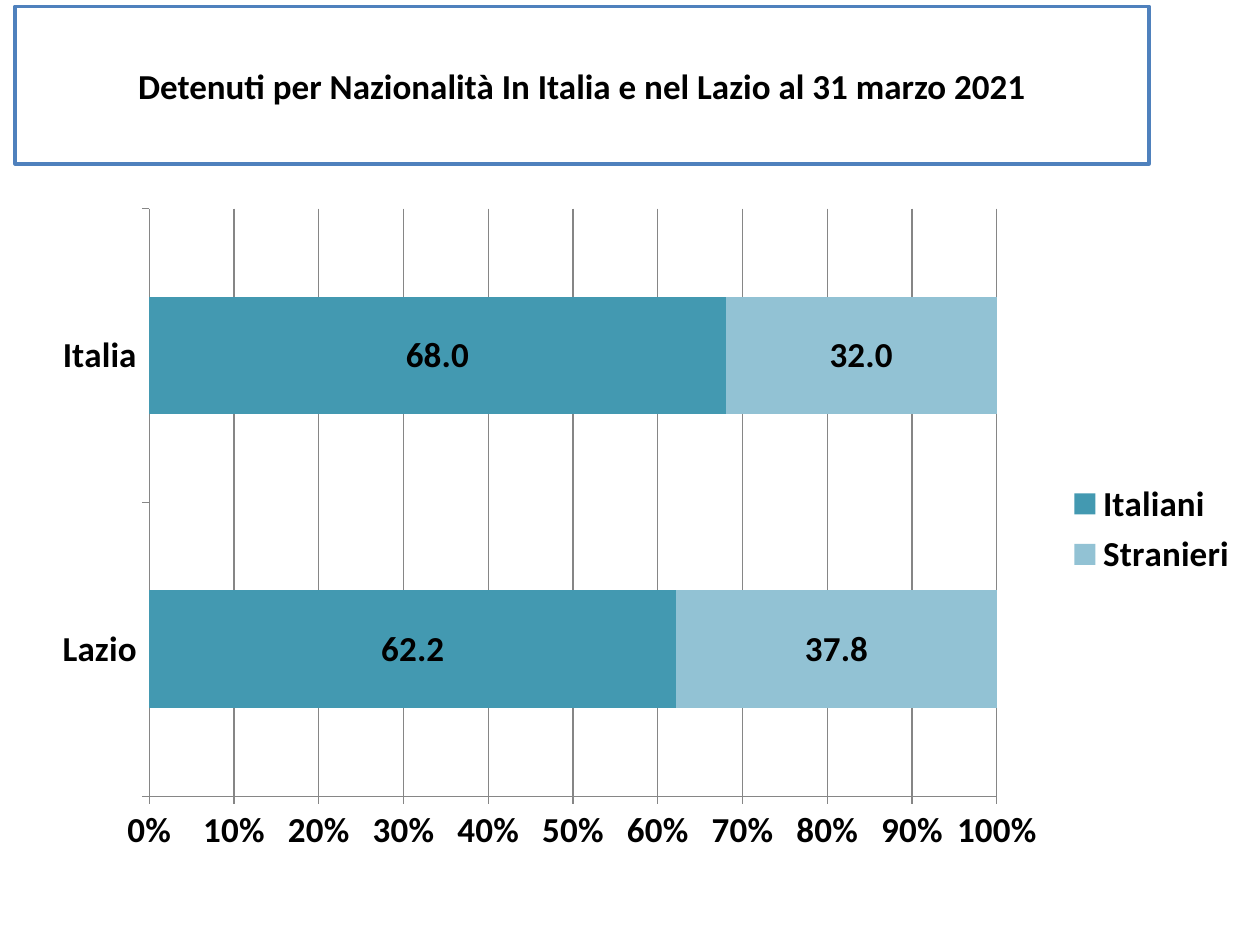
from lxml import etree
from pptx import Presentation
from pptx.chart.data import CategoryChartData
from pptx.dml.color import RGBColor
from pptx.enum.chart import XL_CHART_TYPE, XL_LABEL_POSITION, XL_LEGEND_POSITION, XL_TICK_MARK
from pptx.enum.shapes import MSO_SHAPE
from pptx.enum.text import MSO_ANCHOR, PP_ALIGN
from pptx.oxml.ns import qn
from pptx.util import Inches, Pt

BAR = XL_CHART_TYPE.BAR_STACKED_100
CENTER = XL_LABEL_POSITION.CENTER
RIGHT = XL_LEGEND_POSITION.RIGHT
OUTSIDE = XL_TICK_MARK.OUTSIDE
RECT = MSO_SHAPE.RECTANGLE
MIDDLE = MSO_ANCHOR.MIDDLE
MID = PP_ALIGN.CENTER

COLORS = {
    "white": "FFFFFF",
    "black": "000000",
    "border": "4F81BD",
    "grid": "868686",
    "Italiani": "4399B1",
    "Stranieri": "92C2D4",
}


def color(name):
    return RGBColor.from_string(COLORS[name])


def style(font):
    font.name = "Calibri"
    font.size = Pt(20)
    font.bold = True
    font.color.rgb = color("black")


prs = Presentation()
prs.slide_width = Inches(10)
prs.slide_height = Inches(7.5)
slide = prs.slides.add_slide(prs.slide_layouts[6])

title = slide.shapes.add_shape(RECT, Inches(0.12), Inches(0.05), Inches(9), Inches(1.25))
title.shadow.inherit = False
title.fill.solid()
title.fill.fore_color.rgb = color("white")
title.line.color.rgb = color("border")
title.line.width = Pt(2)
frame = title.text_frame
frame.word_wrap = True
frame.vertical_anchor = MIDDLE
frame.text = "Detenuti per Nazionalità In Italia e nel Lazio al 31 marzo 2021"
frame.paragraphs[0].alignment = MID
style(frame.paragraphs[0].runs[0].font)

data = CategoryChartData(number_format="0.0")
data.categories = ["Lazio", "Italia"]
data.add_series("Italiani", [62.2, 68.0])
data.add_series("Stranieri", [37.8, 32.0])
chart = slide.shapes.add_chart(
    BAR, Inches(0.32), Inches(1.55), Inches(9.61), Inches(5.3), data
).chart
style(chart.font)
chart.has_title = False
chart.has_legend = True
chart.legend.position = RIGHT
chart.legend.include_in_layout = False
style(chart.legend.font)

plot = chart.plots[0]
plot.gap_width = 150
plot.overlap = 100
plot.vary_by_categories = False
for series in plot.series:
    series.format.fill.solid()
    series.format.fill.fore_color.rgb = color(series.name)
    labels = series.data_labels
    labels.show_value = True
    labels.position = CENTER
    labels.number_format = "0.0"
    labels.number_format_is_linked = False
    style(labels.font)

for axis in (chart.category_axis, chart.value_axis):
    axis.major_tick_mark = OUTSIDE
    axis.format.line.color.rgb = color("grid")
    style(axis.tick_labels.font)

scale = chart.value_axis
scale.minimum_scale = 0
scale.maximum_scale = 1
scale.major_unit = 0.1
scale.has_major_gridlines = True
scale.major_gridlines.format.line.color.rgb = color("grid")
scale.tick_labels.number_format = "0%"
scale.tick_labels.number_format_is_linked = False

area = chart.element.find(".//" + qn("c:plotArea"))
layout = area.find(qn("c:layout"))
if layout is None:
    layout = etree.Element(qn("c:layout"))
    area.insert(0, layout)
manual = etree.SubElement(layout, qn("c:manualLayout"))
for tag, value in (
    ("layoutTarget", "inner"), ("xMode", "edge"), ("yMode", "edge"),
    ("x", "0.09"), ("y", "0.02"), ("w", "0.7"), ("h", "0.88"),
):
    etree.SubElement(manual, qn("c:" + tag)).set("val", value)

prs.save("out.pptx")
